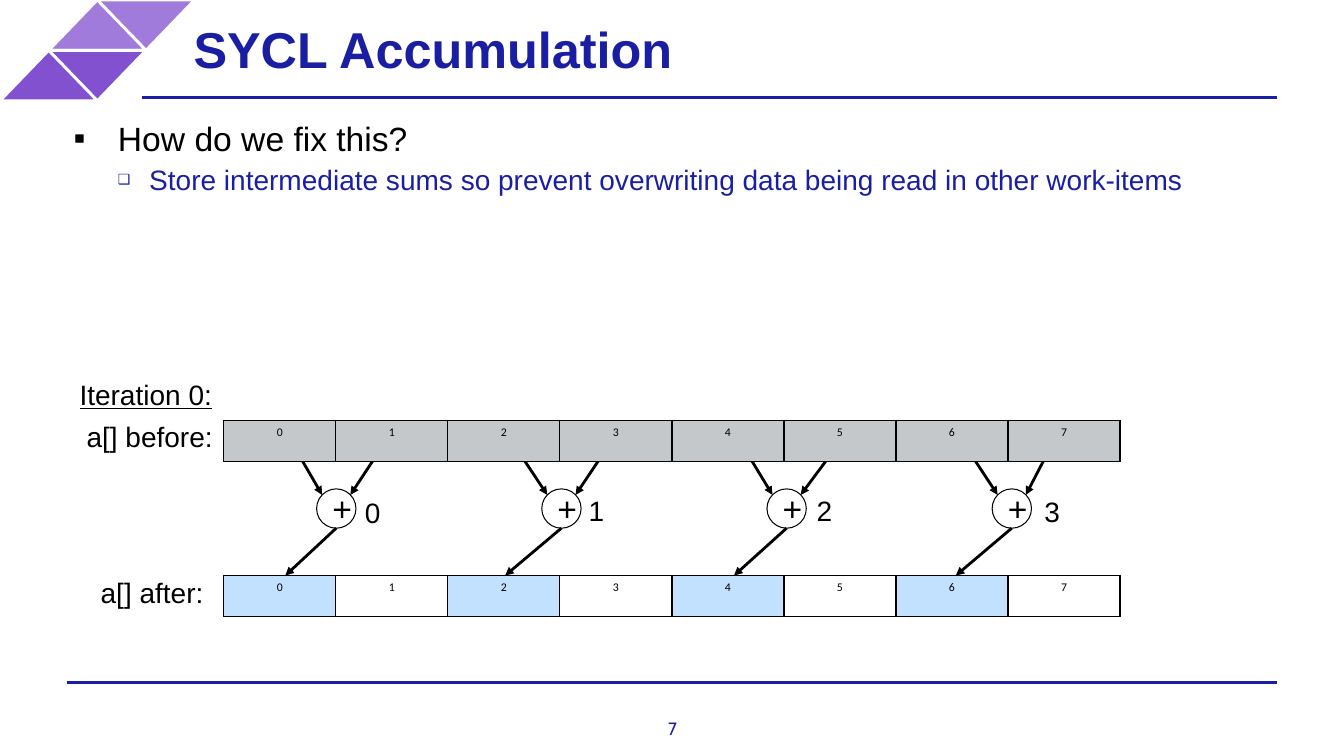
from lxml import etree
from pptx import Presentation
from pptx.dml.color import RGBColor
from pptx.enum.shapes import MSO_CONNECTOR, MSO_SHAPE
from pptx.enum.text import MSO_ANCHOR, PP_ALIGN
from pptx.oxml.ns import qn
from pptx.util import Pt

PX = 9144
STRAIGHT = MSO_CONNECTOR.STRAIGHT
TRIANGLE, OVAL = MSO_SHAPE.ISOSCELES_TRIANGLE, MSO_SHAPE.OVAL
MIDDLE = MSO_ANCHOR.MIDDLE
LEFT, CENTER = PP_ALIGN.LEFT, PP_ALIGN.CENTER

NAVY = RGBColor(0x19, 0x1E, 0xA2)
LILAC = RGBColor(0xA0, 0x7B, 0xDB)
PURPLE = RGBColor(0x81, 0x51, 0xCF)
GREY = RGBColor(0xC4, 0xC8, 0xCB)
SKY = RGBColor(0xC1, 0xE1, 0xFE)
WHITE = RGBColor(0xFF, 0xFF, 0xFF)
BLACK = RGBColor(0, 0, 0)


def px(*lengths):
    return [round(n * PX) for n in lengths]


def style(p, size, color=BLACK, name="Arial", align=LEFT):
    p.alignment = align
    for r in p.runs:
        r.font.size, r.font.name = Pt(size), name
        r.font.color.rgb = color


def set_insets(tf, inset):
    tf.margin_left = tf.margin_right = tf.margin_top = tf.margin_bottom = inset * PX


def add_line(s, start, end, color, arrow=False):
    line = s.shapes.add_connector(STRAIGHT, *px(*start, *end))
    line.line.color.rgb = color
    line.line.width = Pt(2)
    sp_pr = line._element.spPr
    if arrow:
        etree.SubElement(sp_pr.find(qn("a:ln")), qn("a:tailEnd"), type="triangle")
    etree.SubElement(sp_pr, qn("a:effectLst"))


def add_label(s, x, y, w, text):
    tf = s.shapes.add_textbox(*px(x, y, w, 38)).text_frame
    tf.word_wrap = True
    tf.text = text
    p = tf.paragraphs[0]
    p.line_spacing = Pt(20)
    style(p, 20)
    return p


def add_corner(s, x, y, w, h):
    step = w / 4
    for column, row, turn, color in ((2, 0, 180, LILAC), (1, 0, 0, LILAC),
                                     (1, 1, 180, PURPLE), (0, 1, 0, PURPLE)):
        sp = s.shapes.add_shape(
            TRIANGLE, *px(x + column * step, y + row * h / 2, 2 * step, h / 2))
        sp.shadow.inherit = False
        sp.rotation = turn
        sp.fill.solid()
        sp.fill.fore_color.rgb = color
        sp.line.color.rgb = WHITE
        sp.line.width = Pt(2)


def add_title(s, x, y, w, h):
    title = s.shapes.title
    title.left, title.top, title.width, title.height = px(x, y, w, h)
    tf = title.text_frame
    tf.text = "SYCL Accumulation"
    tf.vertical_anchor = MIDDLE
    set_insets(tf, 14)
    style(tf.paragraphs[0], 36, NAVY)
    tf.paragraphs[0].runs[0].font.bold = True


def add_page_number(s, x, y, w, h):
    tf = s.shapes.add_textbox(*px(x, y, w, h)).text_frame
    set_insets(tf, 0)
    tf.word_wrap = False
    tf.text = "7"
    style(tf.paragraphs[0], 12.7, NAVY, "Cabin", CENTER)


def add_bullets(s, x, y, w, h):
    tf = s.shapes.add_textbox(*px(x, y, w, h)).text_frame
    tf.word_wrap = True
    set_insets(tf, 0)
    items = (
        ("How do we fix this?", 0, 24, BLACK, "▪", 100, 50, 44),
        ("Store intermediate sums so prevent overwriting data being read in other work-items",
         1, 20, NAVY, "❑", 50, 81, 31),
    )
    for i, (text, level, size, color, bullet, scale, margin, hang) in enumerate(items):
        p = tf.add_paragraph() if i else tf.paragraphs[0]
        p.text = text
        p.level = level
        if i:
            p.space_before = Pt(3)
        p_pr = p._p.get_or_add_pPr()
        p_pr.set("marL", str(margin * PX))
        p_pr.set("indent", str(-hang * PX))
        etree.SubElement(p_pr, qn("a:buSzPct"), val=str(scale * 1000))
        etree.SubElement(p_pr, qn("a:buFont"), typeface="Arial")
        etree.SubElement(p_pr, qn("a:buChar"), char=bullet)
        style(p, size, color)


def add_border(cell):
    tc_pr = cell._tc.get_or_add_tcPr()
    for side in ("a:lnL", "a:lnR", "a:lnT", "a:lnB"):
        ln = etree.SubElement(tc_pr, qn(side), w=str(Pt(1)))
        fill = etree.SubElement(ln, qn("a:solidFill"))
        etree.SubElement(fill, qn("a:srgbClr"), val=str(BLACK))


def add_array(s, x, y, w, h, fills):
    count = 8
    table = s.shapes.add_table(1, count, *px(x, y, w, h)).table
    table.first_row = table.horz_banding = False
    for i in range(count):
        table.columns[i].width = px(w / count)[0]
        cell = table.cell(0, i)
        cell.text = str(i)
        style(cell.text_frame.paragraphs[0], 8.4, BLACK, "Calibri", CENTER)
        add_border(cell)
        cell.fill.solid()
        cell.fill.fore_color.rgb = fills[i % len(fills)]


def add_adder(s, x, y, size, left, right, top, bottom):
    center = x + size / 2
    sp = s.shapes.add_shape(OVAL, *px(x, y, size, size))
    sp.shadow.inherit = False
    sp.fill.background()
    sp.line.color.rgb = BLACK
    sp.line.width = Pt(0.75)
    tf = sp.text_frame
    tf.text = "+"
    tf.vertical_anchor = MIDDLE
    style(tf.paragraphs[0], 24)
    add_line(s, (left, top), (center - 14, y + 6), BLACK, True)
    add_line(s, (right, top), (center + 14, y + 6), BLACK, True)
    add_line(s, (center, y + size), (left, bottom), BLACK, True)


def add_iteration(s, x, y, w, h):
    before, after, row = y + 42, y + 196, 41
    array_x = x + 153
    adders = ((283, 389, 352, 492), (501, 613, 574, 490),
              (728, 841, 800, 490), (948, 1050, 1026, 491))
    for i, (left, right, label_x, label_y) in enumerate(adders):
        add_adder(s, x + 245 + i * 670 / 3, y + 110, 39, left, right, before + 11, after)
        add_label(s, label_x, label_y, 28, str(i))
    add_array(s, array_x, before, w - 153, row, (GREY,))
    add_array(s, array_x, after, w - 153, row, (SKY, WHITE))
    heading = add_label(s, x, y, 152, "Iteration 0:")
    heading.runs[0].font.underline = True
    add_label(s, x + 7, before, 152, "a[] before:")
    add_label(s, x + 21, y + 197, 152, "a[] after:")


def main():
    prs = Presentation()
    prs.slide_width, prs.slide_height = px(1333, 750)
    s = prs.slides.add_slide(prs.slide_layouts[5])
    add_line(s, (66, 677), (1267, 677), NAVY)
    add_corner(s, 0, 0, 193, 100)
    add_line(s, (141, 97), (1267, 97), NAVY)
    add_title(s, 178, 0, 799, 95)
    add_page_number(s, 662, 712, 10, 21)
    add_bullets(s, 67, 117, 1252, 489)
    add_iteration(s, 69, 375, 1042, 237)
    prs.save("out.pptx")


if __name__ == "__main__":
    main()
